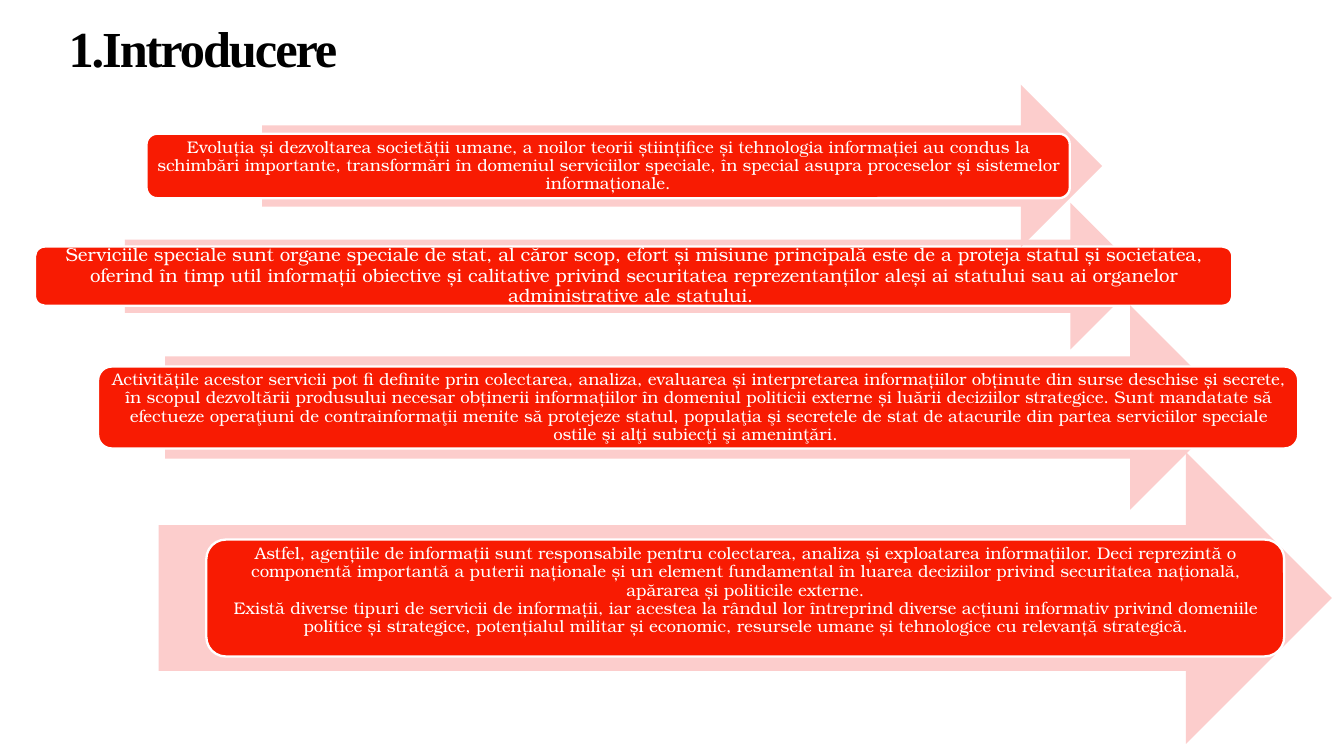
from dataclasses import dataclass

from pptx import Presentation
from pptx.dml.color import RGBColor
from pptx.enum.shapes import MSO_SHAPE
from pptx.enum.text import MSO_ANCHOR, MSO_AUTO_SIZE, PP_ALIGN
from pptx.util import Inches, Pt


@dataclass(frozen=True)
class Theme:
    arrow: RGBColor = RGBColor(0xFC, 0xCD, 0xCC)
    box: RGBColor = RGBColor(0xF8, 0x1B, 0x02)
    light: RGBColor = RGBColor(0xFF, 0xFF, 0xFF)
    dark: RGBColor = RGBColor(0, 0, 0)
    title_font: str = "Times New Roman"
    body_font: str = "TeX Gyre Bonum"
    title_size: int = 27
    body_size: int = 9
    large_size: int = 10


theme = Theme()
deck = Presentation()
deck.slide_width = Inches(10)
deck.slide_height = deck.slide_width * 9 // 16
slide = deck.slides.add_slide(deck.slide_layouts[5])

# Grid of 100 columns, with square cells
cell = deck.slide_width / 100


def grid(*cells):
    return [round(n * cell) for n in cells]


def add_block(preset, fill, left, middle, width, height):
    """Add a filled shape centred on the grid row `middle`."""
    block = slide.shapes.add_shape(
        preset, *grid(left, middle - height / 2, width, height))
    block.shadow.inherit = False
    block.fill.solid()
    block.fill.fore_color.rgb = fill
    block.line.fill.background()
    return block


# Title
title = slide.shapes.title
title.left, title.top, title.width, title.height = grid(4.1, 1.55, 33.1, 5.2)
heading = title.text_frame
heading.auto_size = MSO_AUTO_SIZE.NONE
heading.vertical_anchor = MSO_ANCHOR.BOTTOM
heading.margin_left = heading.margin_right = Inches(0.1)
heading.margin_top = heading.margin_bottom = Inches(0.1)
heading.paragraphs[0].alignment = PP_ALIGN.LEFT
heading_run = heading.paragraphs[0].add_run()
heading_run.text = "1.Introducere"
heading_run.font.name = theme.title_font
heading_run.font.size = Pt(theme.title_size)
heading_run.font.bold = True
heading_run.font.color.rgb = theme.dark
heading_run.font._element.set("spc", "-110")

# Statements from back to front: middle row, then left, width and height of
# the arrow and of the box, type size, anchor, lines
statements = [
    (20.55, (9.3, 75.8, 10.9), (2.6, 89.1, 4.4), theme.large_size, MSO_ANCHOR.MIDDLE, [
        "Serviciile speciale sunt organe speciale de stat, al căror scop, efort și "
        "misiune principală este de a proteja statul și societatea, oferind în timp "
        "util informații obiective și calitative privind securitatea reprezentanților "
        "aleși ai statului sau ai organelor administrative ale statului. "]),
    (30.32, (12.3, 79.4, 15.2), (7.3, 89.3, 6.1), theme.body_size, MSO_ANCHOR.MIDDLE, [
        "Activitățile acestor servicii pot fi definite prin colectarea, analiza, "
        "evaluarea și interpretarea informațiilor obținute din surse deschise și "
        "secrete, în scopul dezvoltării produsului necesar obținerii informațiilor în "
        "domeniul politicii externe și luării deciziilor strategice. Sunt mandatate să "
        "efectueze operaţiuni de contrainformaţii menite să protejeze statul, "
        "populaţia şi secretele de stat de atacurile din partea serviciilor speciale "
        "ostile şi alţi subiecţi şi ameninţări. "]),
    (12.35, (19.5, 62.5, 12.1), (10.9, 68.7, 4.8), theme.body_size, MSO_ANCHOR.MIDDLE, [
        "Evoluția și dezvoltarea societății umane, a noilor teorii științifice și "
        "tehnologia informației au condus la schimbări importante, transformări în "
        "domeniul serviciilor speciale, în special asupra proceselor și sistemelor "
        "informaționale."]),
    (44.5, (11.8, 87.3, 21.7), (15.35, 80.2, 8.7), theme.body_size, MSO_ANCHOR.TOP, [
        "Astfel, agențiile de informații sunt responsabile pentru colectarea, analiza "
        "și exploatarea informațiilor. Deci reprezintă o componentă importantă a "
        "puterii naționale și un element fundamental în luarea deciziilor privind "
        "securitatea națională, apărarea și politicile externe.",
        "Există diverse tipuri de servicii de informații, iar acestea la rândul lor "
        "întreprind diverse acțiuni informativ privind domeniile politice și "
        "strategice, potențialul militar și economic, resursele umane și tehnologice "
        "cu relevanță strategică."]),
]

for middle, arrow, (left, width, height), size, anchor, lines in statements:
    # Pale arrow behind
    add_block(MSO_SHAPE.RIGHT_ARROW, theme.arrow, arrow[0], middle, *arrow[1:])

    # Red box in front
    box = add_block(MSO_SHAPE.ROUNDED_RECTANGLE, theme.box, left, middle, width, height)
    box.line.color.rgb = theme.light
    box.line.width = Pt(1.25)

    # Statement text
    frame = box.text_frame
    frame.word_wrap = True
    frame.vertical_anchor = anchor
    frame.margin_left = frame.margin_right = Inches(0.04)
    frame.margin_top = frame.margin_bottom = 0
    statement = frame.paragraphs[0]
    statement.alignment = PP_ALIGN.CENTER
    statement.line_spacing = 0.9
    for number, line in enumerate(lines):
        if number:
            statement.add_line_break()
        run = statement.add_run()
        run.text = line
        run.font.name = theme.body_font
        run.font.size = Pt(size)
        run.font.color.rgb = theme.light

deck.save("out.pptx")
